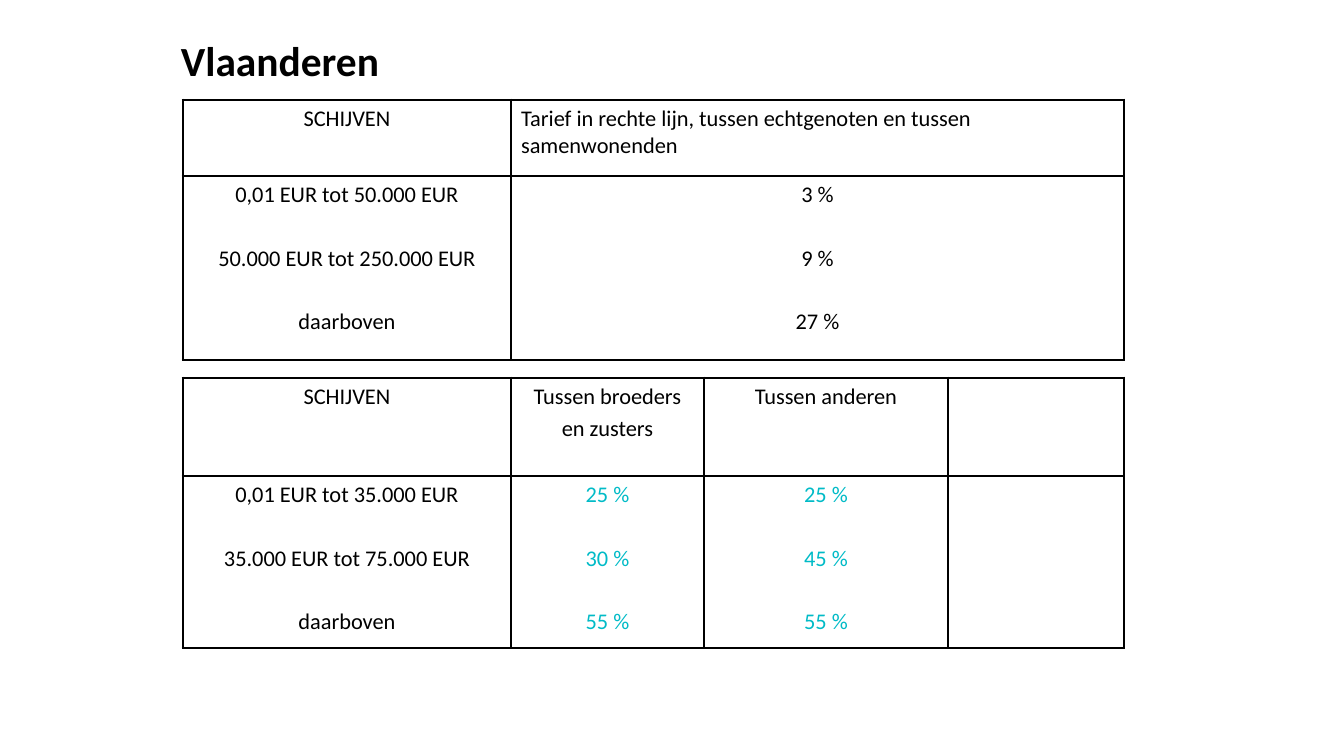
from lxml import etree
from pptx import Presentation, util as u
from pptx.dml.color import RGBColor
from pptx.enum import text
from pptx.oxml.ns import qn

TITLE = "Vlaanderen"
TITLE_BOX = (171, 30, 953, 59)
TABLES = [
    {
        "at": (183, 100),
        "columns": [328, 613],
        "rows": [76, 184],
        "header": [
            ["SCHIJVEN"],
            ["Tarief in rechte lijn, tussen echtgenoten en tussen samenwonenden"],
        ],
        "values": [
            ["0,01 EUR tot 50.000 EUR", "50.000 EUR tot 250.000 EUR", "daarboven"],
            ["3 %", "9 %", "27 %"],
        ],
        "left_aligned": [(0, 1)],
        "accented": [],
    },
    {
        "at": (183, 378),
        "columns": [328, 193, 244, 176],
        "rows": [98, 172],
        "header": [
            ["SCHIJVEN"], ["Tussen broeders", "en zusters"], ["Tussen anderen"], [],
        ],
        "values": [
            ["0,01 EUR tot 35.000 EUR", "35.000 EUR tot 75.000 EUR", "daarboven"],
            ["25 %", "30 %", "55 %"],
            ["25 %", "45 %", "55 %"],
            [],
        ],
        "left_aligned": [],
        "accented": [(1, 1), (1, 2)],
    },
]
THEME = {
    "font": "Calibri",
    "ink": "000000",
    "accent": "01BBC7",
    "title_size": 29.6,
    "cell_size": 16,
    "outer_line": 2.25,
    "inner_line": 1,
    "header_gap": 3.2,
    "value_gap": 26,
}


def px(length):
    return u.Emu(round(length * 914400 / 100.8))


def write(frame, lines, size, color, bold, align, gap):
    for index, line in enumerate(lines):
        para = frame.paragraphs[0] if index == 0 else frame.add_paragraph()
        para.alignment = align
        if index:
            para.space_before = u.Pt(gap)
        span = para.add_run()
        span.text = line
        span.font.color.rgb = RGBColor.from_string(color)
        formats = {"name": THEME["font"], "size": u.Pt(size), "bold": bold}
        for name, value in formats.items():
            setattr(span.font, name, value)


def draw_borders(cell, outer_sides):
    properties = cell._tc.get_or_add_tcPr()
    for side, outer in outer_sides.items():
        width = THEME["outer_line" if outer else "inner_line"]
        border = etree.SubElement(properties, qn(f"a:ln{side}"), w=str(u.Pt(width)))
        fill = etree.SubElement(border, qn("a:solidFill"))
        etree.SubElement(fill, qn("a:srgbClr"), val=THEME["ink"])


def add_rates(page, data):
    columns, rows = data["columns"], data["rows"]
    bounds = (*data["at"], sum(columns), sum(rows))
    table = page.shapes.add_table(len(rows), len(columns), *map(px, bounds)).table
    table.first_row = table.horz_banding = False
    for column, width in zip(table.columns, columns):
        column.width = px(width)
    for row, height in zip(table.rows, rows):
        row.height = px(height)
    for r, part in enumerate(("header", "values")):
        for c, lines in enumerate(data[part]):
            cell = table.cell(r, c)
            draw_borders(cell, {
                "L": c == 0,
                "R": c == len(columns) - 1,
                "T": r == 0,
                "B": r == len(rows) - 1,
            })
            cell.fill.background()
            color = THEME["accent" if (r, c) in data["accented"] else "ink"]
            left = (r, c) in data["left_aligned"]
            align = text.PP_ALIGN.LEFT if left else text.PP_ALIGN.CENTER
            gap = THEME["value_gap" if r else "header_gap"]
            write(cell.text_frame, lines, THEME["cell_size"], color, False, align, gap)


def main():
    deck = Presentation()
    deck.slide_width, deck.slide_height = px(1344), px(756)
    page = deck.slides.add_slide(deck.slide_layouts[6])
    box = page.shapes.add_textbox(*map(px, TITLE_BOX))
    box.text_frame.word_wrap = True
    write(box.text_frame, [TITLE], THEME["title_size"], THEME["ink"], True,
          text.PP_ALIGN.LEFT, 0)
    for data in TABLES:
        add_rates(page, data)
    deck.save("out.pptx")


if __name__ == "__main__":
    main()
